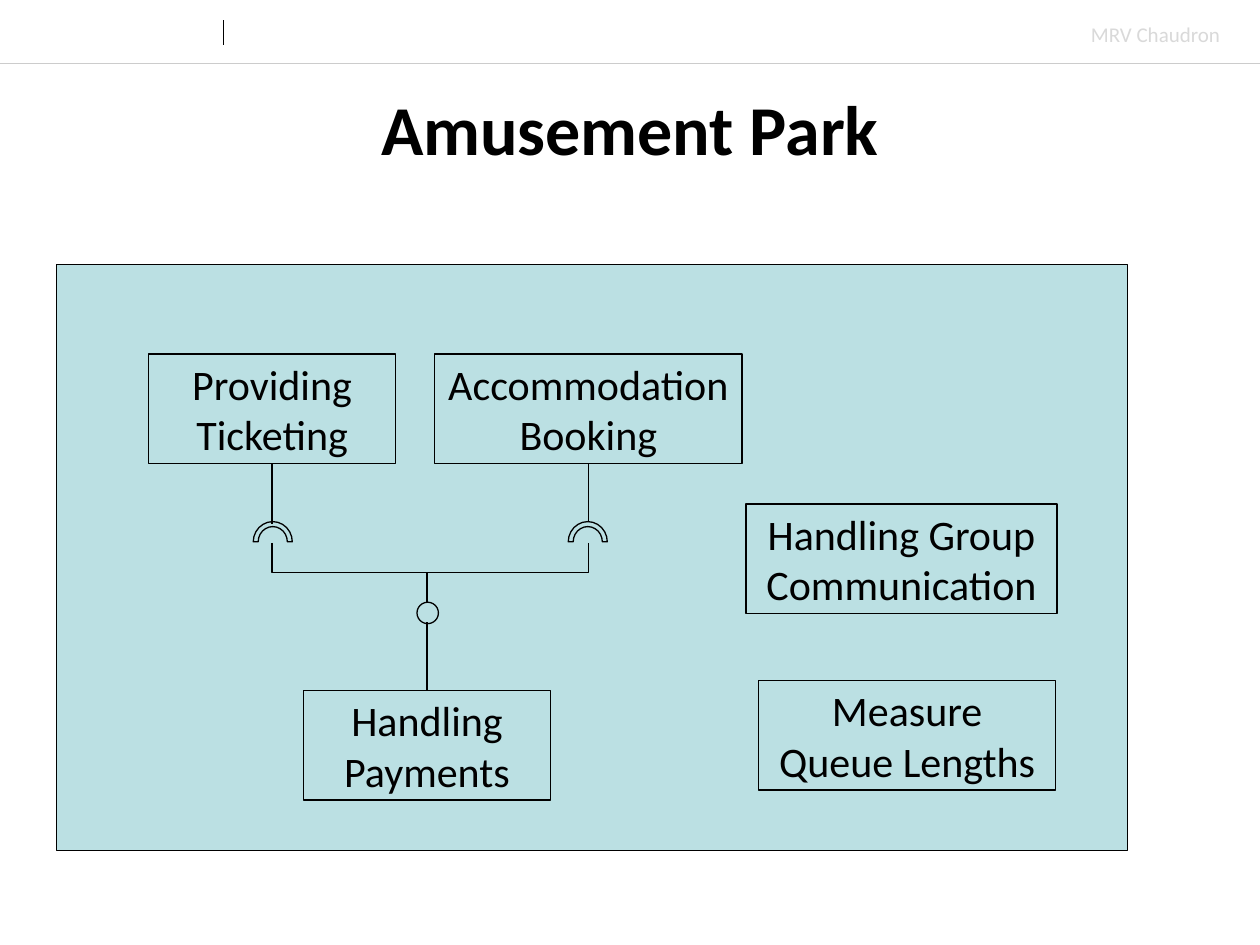
from pptx import Presentation
from pptx.dml.color import RGBColor
from pptx.enum import shapes, text
from pptx.util import Inches, Pt
from lxml import etree

COLORS = {"ink": "000000", "panel": "BBE0E3", "rule": "CCCCCC", "author": "D9D9D9"}
FONT = "Calibri"
A_NS = "http://schemas.openxmlformats.org/drawingml/2006/main"

presentation = Presentation()
presentation.slide_width, presentation.slide_height = Inches(10), Inches(7.5)
slide = presentation.slides.add_slide(presentation.slide_layouts[5])


def add_block(kind, left, top, width, height):
    shape = slide.shapes.add_shape(
        kind, Inches(left), Inches(top), Inches(width), Inches(height))
    shape.shadow.inherit = False
    shape.fill.solid()
    shape.fill.fore_color.rgb = RGBColor.from_string(COLORS["panel"])
    shape.line.color.rgb = RGBColor.from_string(COLORS["ink"])
    shape.line.width = Pt(0.75)
    return shape


def add_line(x1, y1, x2, y2, kind=shapes.MSO_CONNECTOR.STRAIGHT, color="ink", weight=0.75):
    line = slide.shapes.add_connector(kind, Inches(x1), Inches(y1), Inches(x2), Inches(y2))
    line.line.color.rgb = RGBColor.from_string(COLORS[color])
    line.line.width = Pt(weight)
    etree.SubElement(line._element.spPr, f"{{{A_NS}}}effectLst")
    return line


# Header
add_line(0, 0.5, 10, 0.5, color="rule", weight=0.25)
add_line(1.77, 0.16, 1.77, 0.36, weight=0.5)
author = slide.shapes.add_textbox(Inches(8.56), Inches(0.12), Inches(1.23), Inches(0.3))
author.text_frame.word_wrap = False
author.text_frame.auto_size = text.MSO_AUTO_SIZE.SHAPE_TO_FIT_TEXT
paragraph = author.text_frame.paragraphs[0]
paragraph.text = "MRV Chaudron"
paragraph.font.name, paragraph.font.size = FONT, Pt(12)
paragraph.font.color.rgb = RGBColor.from_string(COLORS["author"])

# Title
title = slide.shapes.title
title.left, title.top, title.width, title.height = 0, Inches(0.6), Inches(10), Inches(0.83)
title.text_frame.vertical_anchor = text.MSO_ANCHOR.MIDDLE
paragraph = title.text_frame.paragraphs[0]
paragraph.text = "Amusement Park"
paragraph.alignment = text.PP_ALIGN.CENTER
paragraph.font.name, paragraph.font.size, paragraph.font.bold = FONT, Pt(40), True
paragraph.font.color.rgb = RGBColor.from_string(COLORS["ink"])

# System boundary and components
add_block(shapes.MSO_SHAPE.RECTANGLE, 0.45, 2.1, 8.5, 4.65)
components = {}
for label, left, top, width in [
    ("Handling Payments", 2.41, 5.48, 1.96),
    ("Providing Ticketing", 1.18, 2.81, 1.96),
    ("Accommodation Booking", 3.45, 2.81, 2.44),
    ("Measure Queue Lengths", 6.02, 5.4, 2.36),
    ("Handling Group Communication", 5.92, 4, 2.47),
]:
    component = add_block(shapes.MSO_SHAPE.RECTANGLE, left, top, width, 0.87)
    component.text_frame.word_wrap = True
    component.text_frame.vertical_anchor = text.MSO_ANCHOR.MIDDLE
    paragraph = component.text_frame.paragraphs[0]
    paragraph.text = label
    paragraph.alignment = text.PP_ALIGN.CENTER
    paragraph.font.name, paragraph.font.size = FONT, Pt(24)
    paragraph.font.color.rgb = RGBColor.from_string(COLORS["ink"])
    components[label] = component

# Provided interface: ball on a stem
ball_x, ball_top = 3.39, 4.78
add_block(shapes.MSO_SHAPE.OVAL, 3.31, ball_top, 0.17, 0.17)
stem = add_line(ball_x, 4.94, ball_x, 5.48)
stem.end_connect(components["Handling Payments"], 0)

# Required interfaces: sockets, stems and elbows down to the ball
socket_y = 4.31
for label, x, socket_left, stem_end, rotation in [
    ("Providing Ticketing", 2.16, 2.01, 4.16, 270),
    ("Accommodation Booking", 4.67, 4.51, 4.14, 90),
]:
    socket = add_block(shapes.MSO_SHAPE.BLOCK_ARC, socket_left, 4.14, 0.31, 0.32)
    for index, value in enumerate([108, 0, 0.127]):
        socket.adjustments[index] = value
    stem = add_line(x, 3.68, x, stem_end)
    stem.begin_connect(components[label], 2)

    # The elbow is laid out on its side, then turned to leave downwards
    center_x, center_y = (x + ball_x) / 2, (socket_y + ball_top) / 2
    half_width, half_height = (ball_top - socket_y) / 2, abs(ball_x - x) / 2
    if rotation == 270:
        half_width = -half_width
    elbow = add_line(center_x - half_width, center_y - half_height,
                     center_x + half_width, center_y + half_height,
                     kind=shapes.MSO_CONNECTOR.ELBOW)
    elbow._element.spPr.xfrm.set("rot", str(rotation * 60000))

presentation.save("out.pptx")
